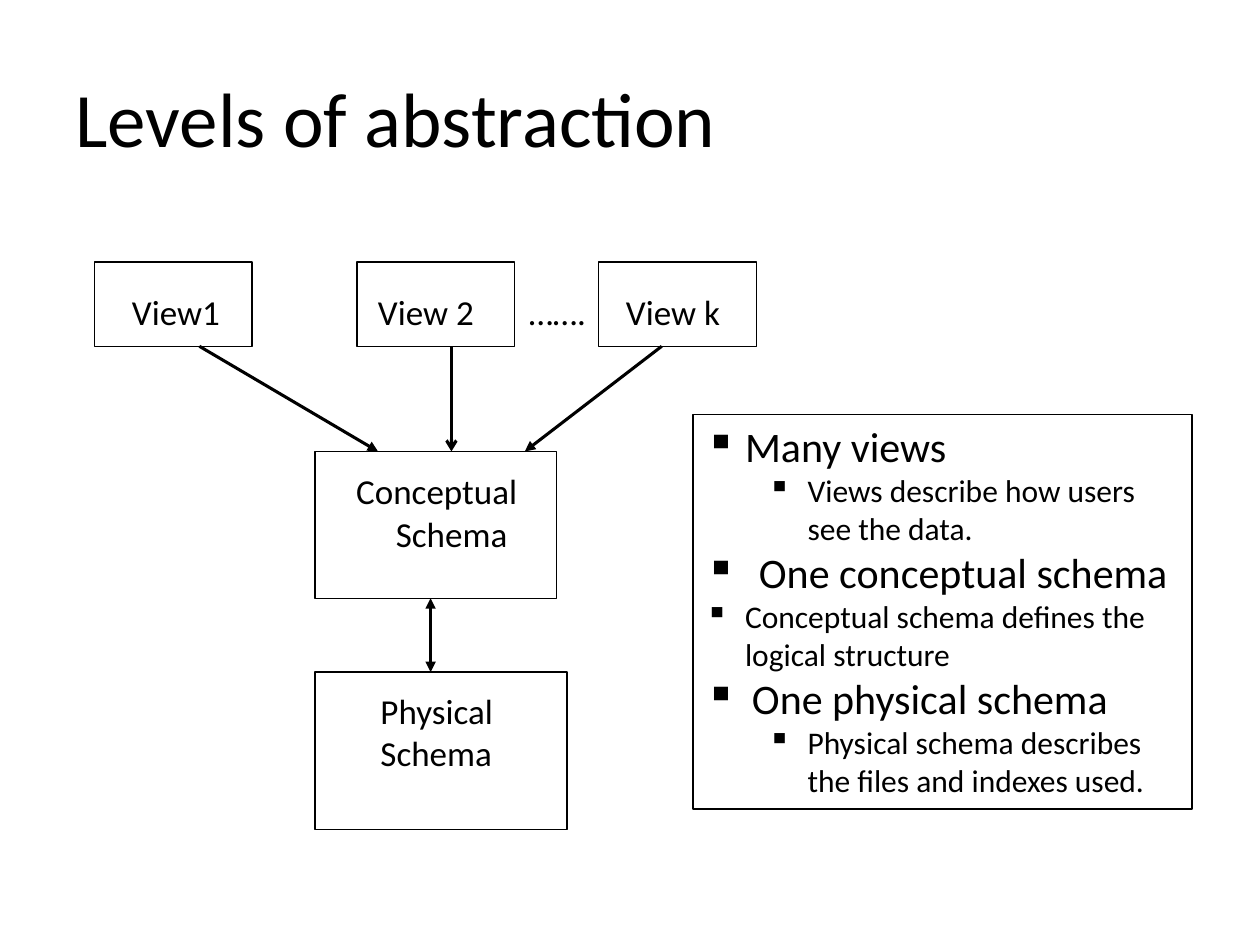
from lxml import etree
from pptx import Presentation
from pptx.dml.color import RGBColor
from pptx.enum import shapes, text
from pptx.oxml import ns
from pptx.util import Cm, Pt

BLACK = RGBColor(0, 0, 0)
FONT = "Calibri"
VIEW_TOP, VIEW_BOTTOM = 5.28, 6.98
CONCEPT_TOP, CONCEPT_BOTTOM = 9.1, 12.06
PHYSICAL_TOP = 13.55


def add_xml(parent, tag, **attributes):
    values = {key: str(value) for key, value in attributes.items()}
    return etree.SubElement(parent, ns.qn(tag), values)


def write(paragraph, words, size):
    run = paragraph.add_run()
    run.text = words
    for name, value in {"name": FONT, "size": Pt(size)}.items():
        setattr(run.font, name, value)
    run.font.color.rgb = BLACK
    paragraph.alignment = text.PP_ALIGN.LEFT


def add_title(slide, words):
    title = slide.shapes.title
    place = {"left": 1.27, "top": 0.76, "width": 22.86, "height": 3.18}
    for name, value in place.items():
        setattr(title, name, Cm(value))
    title.text_frame.vertical_anchor = text.MSO_ANCHOR.MIDDLE
    write(title.text_frame.paragraphs[0], words, 44)


def add_box(parent, left, top, width, height):
    box = parent.shapes.add_shape(
        shapes.MSO_SHAPE.RECTANGLE, Cm(left), Cm(top), Cm(width), Cm(height))
    box.shadow.inherit = False
    box.fill.background()
    box.line.color.rgb = BLACK
    box.line.width = Pt(0.75)
    return box


def add_label(parent, left, top, width, height, lines):
    label = parent.shapes.add_textbox(Cm(left), Cm(top), Cm(width), Cm(height))
    frame = label.text_frame
    frame.word_wrap = True
    for number, (words, indent) in enumerate(lines):
        paragraph = frame.add_paragraph() if number else frame.paragraphs[0]
        write(paragraph, words, 20)
        paragraph._p.get_or_add_pPr().set("marL", str(Cm(indent)))
    return label


def set_tabs(paragraph, stops):
    tabs = add_xml(paragraph._p.get_or_add_pPr(), "a:tabLst")
    for stop in stops:
        add_xml(tabs, "a:tab", pos=int(Cm(stop)), algn="l")


def add_arrow(parent, start, end, **heads):
    arrow = parent.shapes.add_connector(
        shapes.MSO_CONNECTOR.STRAIGHT, *map(Cm, start + end))
    arrow.line.color.rgb = BLACK
    arrow.line.width = Pt(1.75)
    outline = arrow.line._get_or_add_ln()
    for end_name, kind in heads.items():
        add_xml(outline, f"a:{end_name}", type=kind)
    add_xml(arrow._element.spPr, "a:effectLst")


def add_bullet(paragraph, words, size, level, margin, hanging, mark_size):
    paragraph.level = level
    write(paragraph, words, size)
    properties = paragraph._p.get_or_add_pPr()
    for name, value in {"marL": margin, "indent": -hanging}.items():
        properties.set(name, str(Cm(value)))
    add_xml(properties, "a:buSzPts", val=mark_size * 100)
    add_xml(properties, "a:buChar", char="▪")


def add_schema_diagram(slide):
    diagram = slide.shapes.add_group_shape()
    for left in (1.9, 7.2, 12.07):
        add_box(diagram, left, VIEW_TOP, 3.18, VIEW_BOTTOM - VIEW_TOP)
    add_box(diagram, 6.35, CONCEPT_TOP, 4.87, CONCEPT_BOTTOM - CONCEPT_TOP)
    add_box(diagram, 6.35, PHYSICAL_TOP, 5.08, 3.18)

    for view_x, concept_x, head in (
            (4.02, 7.62, "triangle"), (9.1, 9.1, "arrow"), (13.34, 10.58, "triangle")):
        add_arrow(diagram, (view_x, VIEW_BOTTOM), (concept_x, CONCEPT_TOP), tailEnd=head)
    add_arrow(diagram, (8.68, CONCEPT_BOTTOM), (8.68, PHYSICAL_TOP),
              headEnd="triangle", tailEnd="triangle")

    views = add_label(diagram, 2.41, 5.74, 12.8, 1.12,
                      [("View1\tView 2\t…….\tView k", 0)])
    set_tabs(views.text_frame.paragraphs[0], (4.96, 8, 9.96))
    add_label(diagram, 6.93, 9.35, 3.96, 1.96, [("Conceptual", 0), ("Schema", 0.8)])
    add_label(diagram, 7.42, 13.77, 3, 1.96, [("Physical", 0), ("Schema", 0)])


def add_summary(slide):
    frame = add_box(slide, 13.97, 8.36, 10.06, 7.95).text_frame
    frame.word_wrap = True
    frame.vertical_anchor = text.MSO_ANCHOR.TOP
    points = [
        ("Many views", 24, 0, 0.8, 0.8, 24),
        ("Views describe how users see the data.", 18, 1, 2.06, 0.8, 18),
        ("One conceptual schema", 24, 0, 1.08, 1.08, 18),
        ("Conceptual schema defines the logical structure", 18, 0, 0.8, 0.8, 18),
        ("One physical schema", 24, 0, 0.94, 0.94, 18),
        ("Physical schema describes the files and indexes used.", 18, 1, 2.06, 0.8, 18),
    ]
    for number, point in enumerate(points):
        paragraph = frame.add_paragraph() if number else frame.paragraphs[0]
        add_bullet(paragraph, *point)


def main():
    presentation = Presentation()
    presentation.slide_width = Cm(25.4)
    presentation.slide_height = Cm(19.05)
    slide = presentation.slides.add_slide(presentation.slide_layouts[5])
    add_title(slide, "Levels of abstraction")
    add_schema_diagram(slide)
    add_summary(slide)
    presentation.save("out.pptx")


if __name__ == "__main__":
    main()
